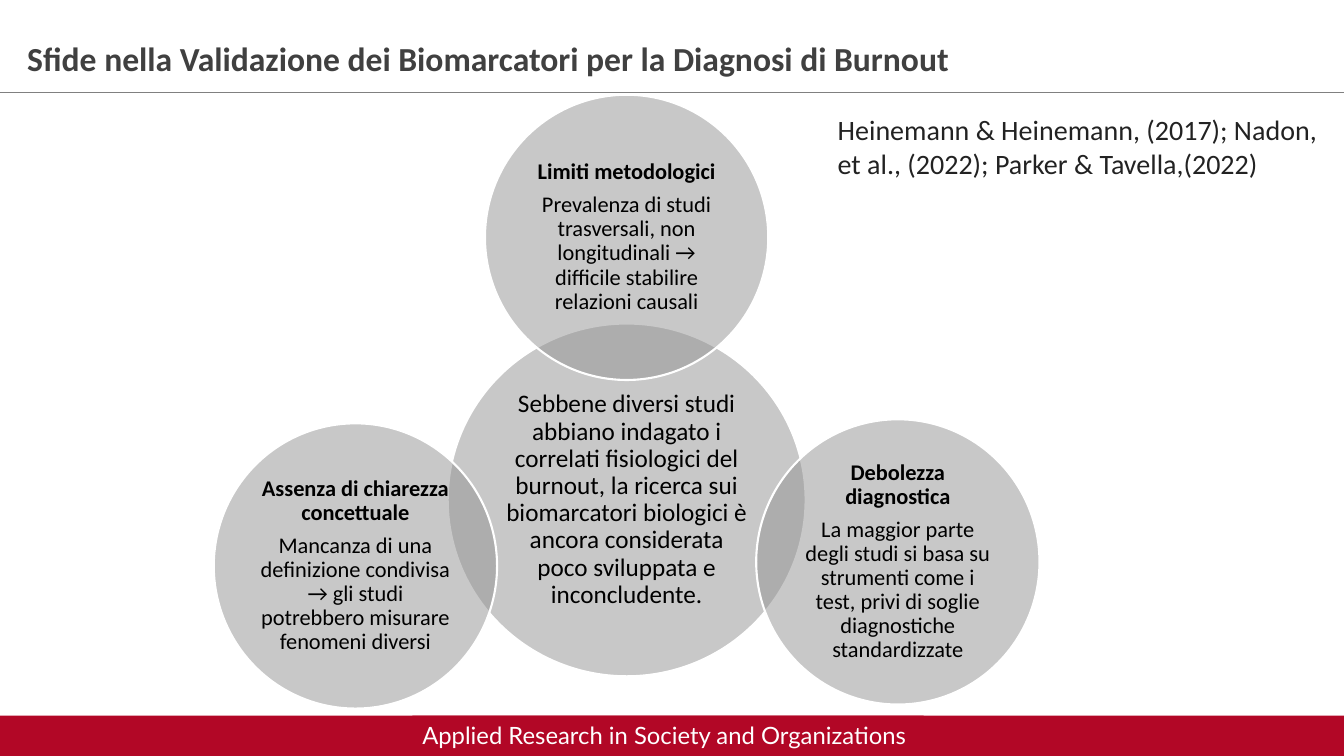
from lxml import etree
from pptx import Presentation
from pptx.dml.color import RGBColor
from pptx.enum.shapes import MSO_CONNECTOR, MSO_SHAPE
from pptx.enum.text import MSO_ANCHOR, MSO_AUTO_SIZE, PP_ALIGN
from pptx.oxml.ns import qn
from pptx.util import Pt

PX = 9144  # 100 px to the inch
WIDTH, HEIGHT = 1333, 750
COLORS = {
    "title": "404040", "citation": "222222", "rule": "808080", "banner": "B20726",
    "circle": "939393", "white": "FFFFFF", "black": "000000",
}


def px(*lengths):
    return [length * PX for length in lengths]


def write(frame, lines, size, color, font="Calibri", align=PP_ALIGN.LEFT,
          anchor=MSO_ANCHOR.TOP):
    """Fill a text frame with one paragraph for each (text, bold) pair."""
    frame.word_wrap = True
    frame.auto_size = MSO_AUTO_SIZE.NONE
    frame.vertical_anchor = anchor
    for index, (text, bold) in enumerate(lines):
        paragraph = frame.paragraphs[0] if index == 0 else frame.add_paragraph()
        paragraph.text = text
        paragraph.alignment = align
        paragraph.font.name = font
        paragraph.font.size = Pt(size)
        paragraph.font.bold = bold
        paragraph.font.color.rgb = RGBColor.from_string(COLORS[color])


deck = Presentation()
deck.slide_width, deck.slide_height = px(WIDTH, HEIGHT)
slide = deck.slides.add_slide(deck.slide_layouts[5])
shapes = slide.shapes

# Header
title = shapes.title
title.left, title.top, title.width, title.height = px(17, 33, 1291, 50)
write(title.text_frame,
      [("Sfide nella Validazione dei Biomarcatori per la Diagnosi di Burnout", True)],
      24, "title")

rule = shapes.add_connector(MSO_CONNECTOR.STRAIGHT, *px(0, 91, WIDTH, 91))
rule.line.color.rgb = RGBColor.from_string(COLORS["rule"])
rule.line.width = Pt(0.25)
etree.SubElement(rule.element.spPr, qn("a:effectLst"))

# Footer
for left, width in [(0, WIDTH), (409, 507)]:
    banner = shapes.add_shape(MSO_SHAPE.RECTANGLE, *px(left, 710, width, 40))
    banner.shadow.inherit = False
    banner.fill.solid()
    banner.fill.fore_color.rgb = RGBColor.from_string(COLORS["banner"])
    banner.line.fill.background()
write(banner.text_frame, [("Applied Research in Society and Organizations", False)],
      17, "white", font="Lato")

citation = shapes.add_textbox(*px(821, 107, 508, 77))
write(citation.text_frame,
      [("Heinemann & Heinemann, (2017); Nadon, et al., (2022); Parker & Tavella,(2022)",
        False)], 20, "citation")

# Central finding and the three challenges around it: box, inset, text size, lines
circles = [
    ((444, 321, 355, 350), 3, 18, [
        ("Sebbene diversi studi abbiano indagato i correlati fisiologici del burnout, "
         "la ricerca sui biomarcatori biologici è ancora considerata poco sviluppata "
         "e inconcludente.", False)]),
    ((481, 94, 281, 283), 2, 16, [
        ("Limiti metodologici", True),
        ("Prevalenza di studi trasversali, non longitudinali → difficile stabilire "
         "relazioni causali", False)]),
    ((750, 416, 281, 283), 2, 16, [
        ("Debolezza diagnostica", True),
        ("La maggior parte degli studi si basa su strumenti come i test, privi di "
         "soglie diagnostiche standardizzate", False)]),
    ((212, 420, 281, 283), 2, 16, [
        ("Assenza di chiarezza concettuale", True),
        ("Mancanza di una definizione condivisa → gli studi potrebbero misurare "
         "fenomeni diversi", False)]),
]
for box, inset, size, lines in circles:
    circle = shapes.add_shape(MSO_SHAPE.OVAL, *px(*box))
    circle.shadow.inherit = False
    circle.fill.solid()
    circle.fill.fore_color.rgb = RGBColor.from_string(COLORS["circle"])
    tint = circle.element.spPr.find(qn("a:solidFill"))[0]
    etree.SubElement(tint, qn("a:alpha"), val="50000")
    circle.line.color.rgb = RGBColor.from_string(COLORS["white"])
    circle.line.width = Pt(1.5)

    frame = circle.text_frame
    frame.margin_left, frame.margin_top, frame.margin_right, frame.margin_bottom = px(
        inset, inset, inset, inset)
    write(frame, lines, size, "black", align=PP_ALIGN.CENTER, anchor=MSO_ANCHOR.MIDDLE)
    for paragraph in frame.paragraphs:
        paragraph.line_spacing = 0.9
        paragraph.space_after = Pt(round(size * 0.35))

deck.save("out.pptx")
